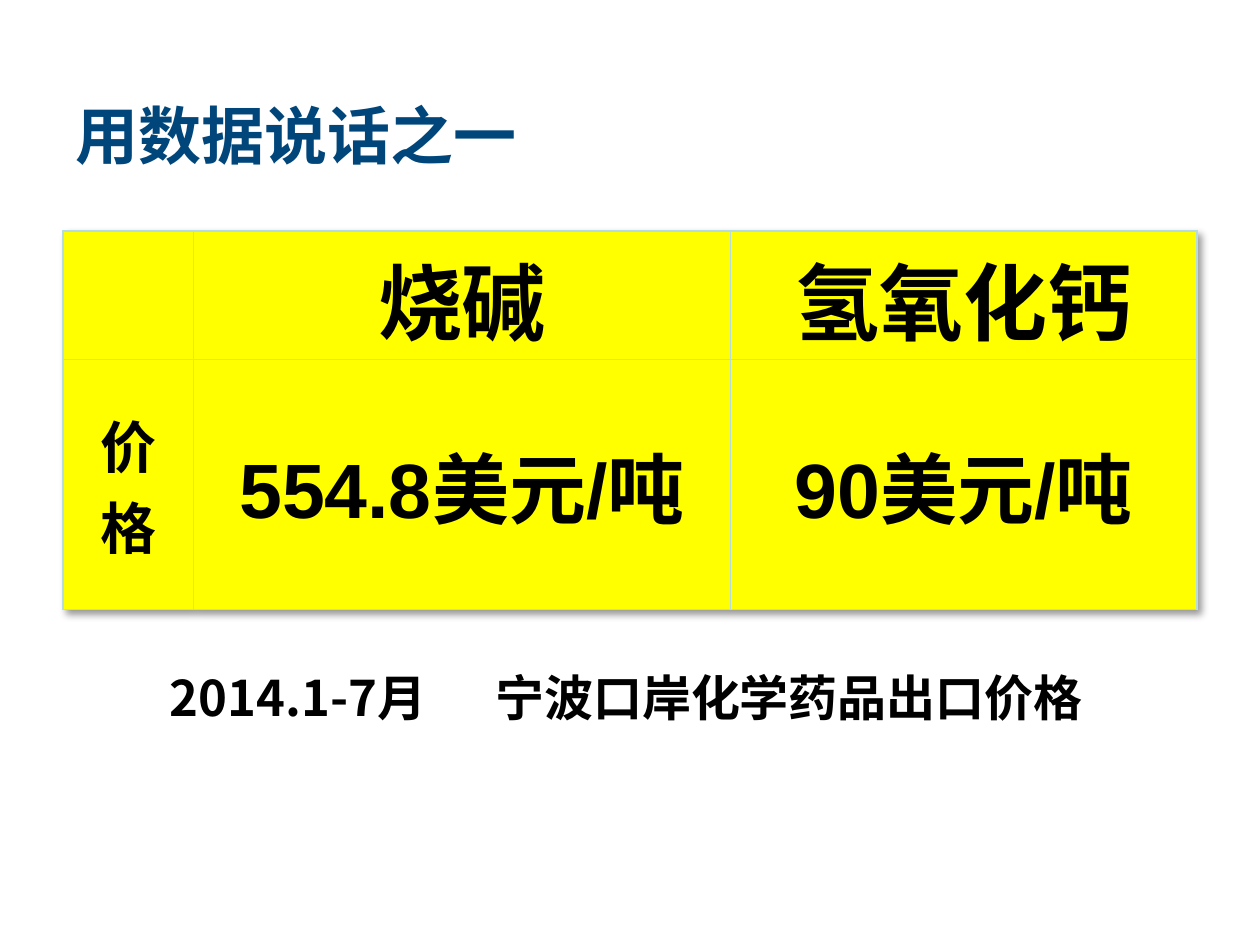
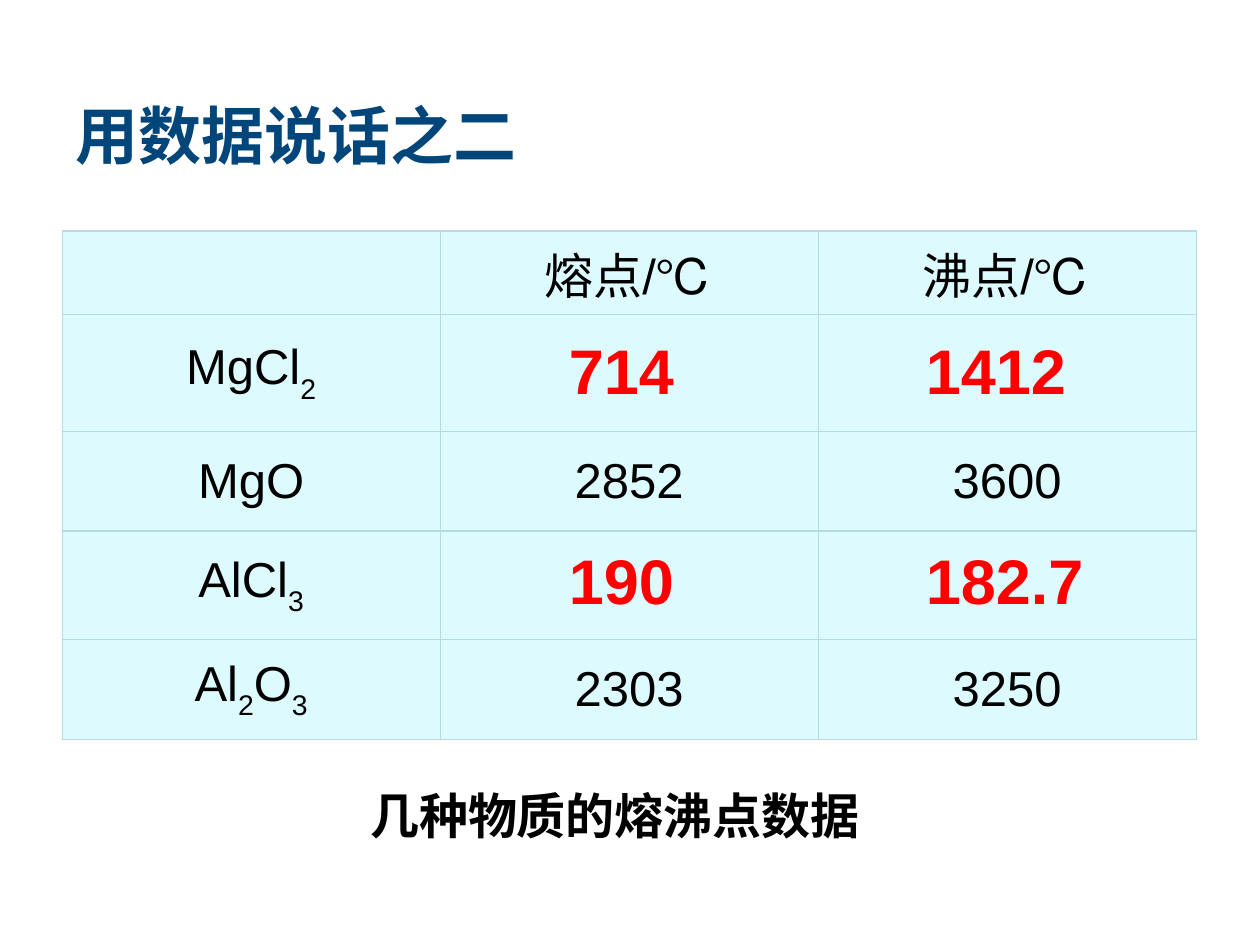
from lxml.etree import SubElement
from pptx import Presentation
from pptx.dml.color import RGBColor
from pptx.enum.text import MSO_ANCHOR, PP_ALIGN
from pptx.oxml import parse_xml
from pptx.oxml.ns import qn
from pptx.util import Pt

CENTER, LEFT, MIDDLE = PP_ALIGN.CENTER, PP_ALIGN.LEFT, MSO_ANCHOR.MIDDLE
NS = 'xmlns:a="http://schemas.openxmlformats.org/drawingml/2006/main"'
COLORS = {"title": "00467A", "text": "000000", "key": "FF0000",
          "price": "FFFF00", "melt": "DDFBFF", "line": "B6DCDF", "shade": "000000"}
SANS, CJK, CJK_JP = "Arial", "Noto Sans CJK SC", "Noto Sans CJK JP"

TITLE = {"size": 36, "bold": True, "name": CJK, "color": "title"}
NOTE = {"size": 28, "bold": True, "name": CJK_JP, "color": "text"}
KEY = {"size": 36, "bold": True, "name": SANS, "color": "key"}
PLAIN = {"size": 28, "bold": False, "name": SANS, "color": "text"}
HEAD = {**PLAIN, "size": 48, "bold": True}
SIDE = {**HEAD, "size": 32}
PRICE = {**HEAD, "size": 44}


def style(run, look):
    values = {**look, "size": Pt(look["size"])}
    color = values.pop("color")
    for name, value in values.items():
        setattr(run.font, name, value)
    run.font.color.rgb = RGBColor.from_string(COLORS[color])
    face = CJK if look["name"] == SANS else look["name"]
    SubElement(run._r.get_or_add_rPr(), qn("a:ea"), typeface=face)


def write(frame, text, look, align=LEFT):
    """Fill a frame line by line; parts between underscores are subscripts."""
    for row, line in enumerate(text.split("\n")):
        para = frame.add_paragraph() if row else frame.paragraphs[0]
        para.alignment = align
        for spot, part in enumerate(line.split("_")):
            if part:
                run = para.add_run()
                run.text = part
                style(run, look)
                if spot % 2:
                    run._r.get_or_add_rPr().set("baseline", "-30000")


def label(slide, box, text, look, tab=None):
    frame = slide.shapes.add_textbox(*map(Pt, box)).text_frame
    frame.word_wrap = True
    frame.vertical_anchor = MIDDLE
    if tab:
        stops = SubElement(frame.paragraphs[0]._p.get_or_add_pPr(), qn("a:tabLst"))
        SubElement(stops, qn("a:tab"), pos=str(Pt(tab)), algn="l")
    write(frame, text, look)


def edge(cell):
    """Draw the four thin borders of a cell."""
    for side in "LRTB":
        cell._tc.get_or_add_tcPr().append(parse_xml(
            f'<a:ln{side} {NS} w="{Pt(0.75)}"><a:solidFill>'
            f'<a:srgbClr val="{COLORS["line"]}"/></a:solidFill></a:ln{side}>'))


def grid(slide, left, top, cols, rows, cells, fill):
    """Place a table; cells holds rows of (text, look) pairs."""
    table = slide.shapes.add_table(len(rows), len(cols), Pt(left), Pt(top),
                                   Pt(sum(cols)), Pt(sum(rows))).table
    table.first_row = table.horz_banding = False
    for col, width in zip(table.columns, cols):
        col.width = Pt(width)
    for row, height, line in zip(table.rows, rows, cells):
        row.height = Pt(height)
        for cell, (text, look) in zip(row.cells, line):
            edge(cell)
            cell.fill.solid()
            cell.fill.fore_color.rgb = RGBColor.from_string(COLORS[fill])
            cell.vertical_anchor = MIDDLE
            write(cell.text_frame, text, look, CENTER)
    return table


def shade(table):
    """Give a table a soft shadow to the lower right."""
    table._tbl.tblPr.insert(0, parse_xml(
        f'<a:effectLst {NS}><a:outerShdw blurRad="{Pt(4)}" dist="{Pt(3)}" '
        f'dir="2700000" algn="tl" rotWithShape="0"><a:srgbClr val="{COLORS["shade"]}">'
        '<a:alpha val="40000"/></a:srgbClr></a:outerShdw></a:effectLst>'))


def start(deck, title):
    slide = deck.slides.add_slide(deck.slide_layouts[6])
    label(slide, (36, 51, 276, 51), title, TITLE)
    return slide


def prices(deck):
    slide = start(deck, "用数据说话之一")
    cells = [
        [("", SIDE), ("烧碱", HEAD), ("氢氧化钙", HEAD)],
        [("价\n格", SIDE), ("554.8美元/吨", PRICE), ("90美元/吨", PRICE)],
    ]
    shade(grid(slide, 36, 132, (74.5, 307, 266.5), (73.5, 143), cells, "price"))
    label(slide, (90, 378, 570, 41), "2014.1-7月\t宁波口岸化学药品出口价格", NOTE, 186)


def points(deck):
    slide = start(deck, "用数据说话之二")
    left, top, cols = 35.5, 132, (216,) * 3
    rows = (47.5, 67, 57, 62, 57)
    lines = [("", "熔点/℃", "沸点/℃"), ("MgCl_2_", "", ""), ("MgO", "2852", "3600"),
             ("AlCl_3_", "", ""), ("Al_2_O_3_", "2303", "3250")]
    cells = [[(text, PLAIN) for text in line] for line in lines]
    grid(slide, left, top, cols, rows, cells, "melt")
    for row, pair in ((54, ("714", "1412")), (174, ("190", "182.7"))):
        for col, text in enumerate(pair):
            label(slide, (left + 282.5 + 204 * col, top + row, 156, 50), text, KEY)
    label(slide, (204.5, 445, 413, 41), "几种物质的熔沸点数据", NOTE)


def main():
    deck = Presentation()
    deck.slide_width, deck.slide_height = Pt(720), Pt(540)
    prices(deck)
    points(deck)
    deck.save("out.pptx")


if __name__ == "__main__":
    main()
